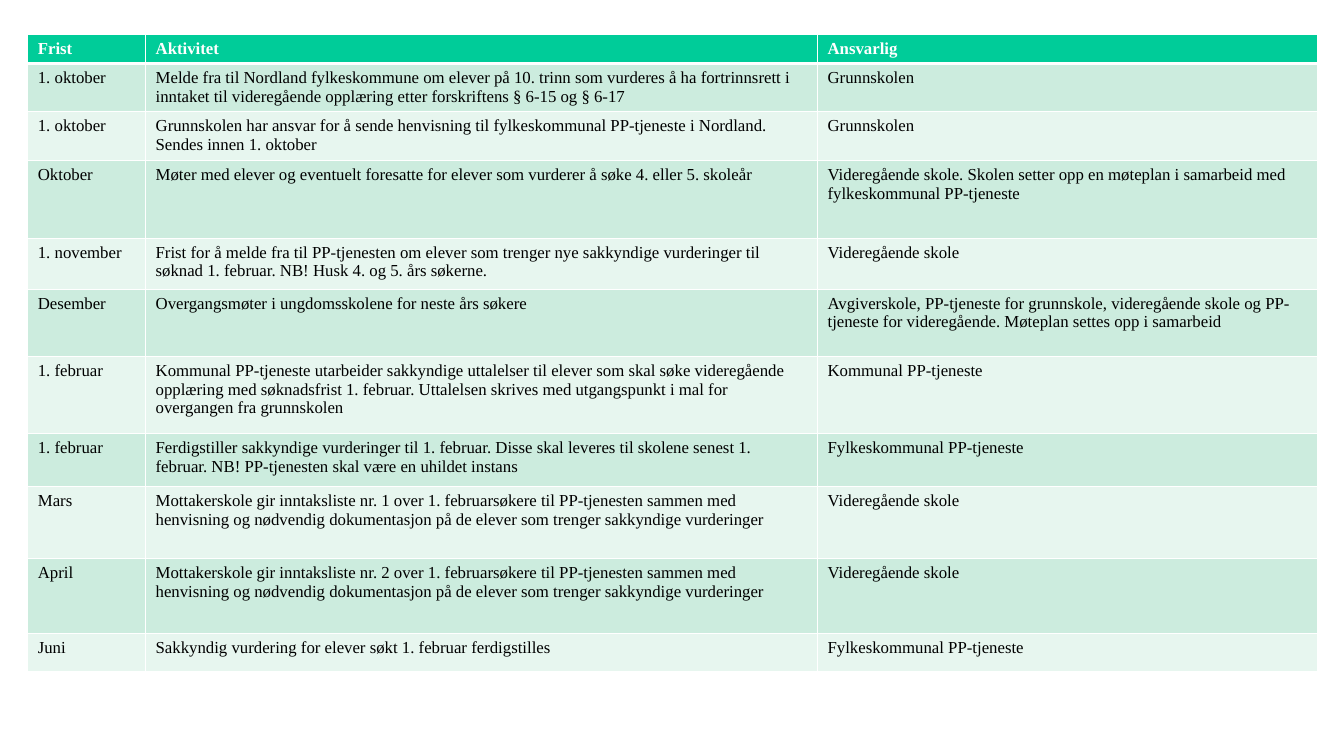
from lxml import etree
from pptx import Presentation
from pptx.dml.color import RGBColor
from pptx.oxml.ns import qn
from pptx.util import Cm, Pt

WHITE = RGBColor(0xFF, 0xFF, 0xFF)
BLACK = RGBColor(0x00, 0x00, 0x00)
HEADER_GREEN = RGBColor(0x00, 0xCC, 0x99)
BAND_GREENS = (RGBColor(0xE7, 0xF6, 0xEF), RGBColor(0xCC, 0xEC, 0xDE))

TEXT_FORMAT = {"name": "Times New Roman", "size": Pt(12)}
THIN_LINE = Pt(1)
THICK_LINE = Pt(3)

COLUMN_WIDTHS = (2.97, 16.94, 12.6)
HEADINGS = ("Frist", "Aktivitet", "Ansvarlig")
INTAKE_LIST = (
    "Mottakerskole gir inntaksliste nr. {} over 1. februarsøkere til PP-tjenesten sammen med "
    "henvisning og nødvendig dokumentasjon på de elever som trenger sakkyndige vurderinger"
)
DEADLINES = (
    (1.21, "1. oktober",
     "Melde fra til Nordland fylkeskommune om elever på 10. trinn som vurderes å ha fortrinnsrett "
     "i inntaket til videregående opplæring etter forskriftens § 6-15 og § 6-17",
     "Grunnskolen"),
    (1.24, "1. oktober",
     "Grunnskolen har ansvar for å sende henvisning til fylkeskommunal PP-tjeneste i Nordland. "
     "Sendes innen 1. oktober",
     "Grunnskolen"),
    (1.95, "Oktober",
     "Møter med elever og eventuelt foresatte for elever som vurderer å søke 4. eller 5. skoleår",
     "Videregående skole. Skolen setter opp en møteplan i samarbeid med "
     "fylkeskommunal PP-tjeneste"),
    (1.29, "1. november",
     "Frist for å melde fra til PP-tjenesten om elever som trenger nye sakkyndige vurderinger til "
     "søknad 1. februar. NB! Husk 4. og 5. års søkerne.",
     "Videregående skole"),
    (1.69, "Desember",
     "Overgangsmøter i ungdomsskolene for neste års søkere",
     "Avgiverskole, PP-tjeneste for grunnskole, videregående skole og PP-tjeneste for "
     "videregående. Møteplan settes opp i samarbeid"),
    (1.95, "1. februar",
     "Kommunal PP-tjeneste utarbeider sakkyndige uttalelser til elever som skal søke videregående "
     "opplæring med søknadsfrist 1. februar. Uttalelsen skrives med utgangspunkt i mal for "
     "overgangen fra grunnskolen",
     "Kommunal PP-tjeneste"),
    (1.33, "1. februar",
     "Ferdigstiller sakkyndige vurderinger til 1. februar. Disse skal leveres til skolene senest "
     "1. februar. NB! PP-tjenesten skal være en uhildet instans",
     "Fylkeskommunal PP-tjeneste"),
    (1.81, "Mars", INTAKE_LIST.format(1), "Videregående skole"),
    (1.89, "April", INTAKE_LIST.format(2), "Videregående skole"),
    (0.96, "Juni",
     "Sakkyndig vurdering for elever søkt 1. februar ferdigstilles",
     "Fylkeskommunal PP-tjeneste"),
)
TABLE_ROWS = ((0.73, *HEADINGS), *DEADLINES)


def set_borders(cell, widths):
    properties = cell._tc.get_or_add_tcPr()
    for side, width in widths.items():
        line = etree.SubElement(properties, qn(f"a:ln{side}"), w=str(width))
        fill = etree.SubElement(line, qn("a:solidFill"))
        etree.SubElement(fill, qn("a:srgbClr"), val=str(WHITE))


def format_cell(cell, text, row_index):
    is_header = row_index == 0
    set_borders(cell, {
        "L": THIN_LINE,
        "R": THIN_LINE,
        "T": THICK_LINE if row_index == 1 else THIN_LINE,
        "B": THICK_LINE if is_header else THIN_LINE,
    })
    cell.fill.solid()
    cell.fill.fore_color.rgb = HEADER_GREEN if is_header else BAND_GREENS[row_index % 2]
    run = cell.text_frame.paragraphs[0].add_run()
    run.text = text
    for attribute, value in (TEXT_FORMAT | {"bold": is_header}).items():
        setattr(run.font, attribute, value)
    run.font.color.rgb = WHITE if is_header else BLACK


def add_deadline_table(slide, left, top, width, height):
    table = slide.shapes.add_table(
        len(TABLE_ROWS), len(COLUMN_WIDTHS), left, top, width, height
    ).table
    for column, share in zip(table.columns, COLUMN_WIDTHS):
        column.width = int(width * share / sum(COLUMN_WIDTHS))
    total_height = sum(row[0] for row in TABLE_ROWS)
    for row_index, (row_height, *texts) in enumerate(TABLE_ROWS):
        row = table.rows[row_index]
        row.height = int(height * row_height / total_height)
        for cell, text in zip(row.cells, texts):
            format_cell(cell, text, row_index)


def main():
    presentation = Presentation()
    presentation.slide_width = Cm(33.87)
    presentation.slide_height = Cm(19.05)
    blank_layout = presentation.slide_layouts[6]
    slide = presentation.slides.add_slide(blank_layout)
    add_deadline_table(slide, Cm(0.7), Cm(0.87), Cm(32.5), Cm(16.05))
    presentation.save("out.pptx")


if __name__ == "__main__":
    main()
